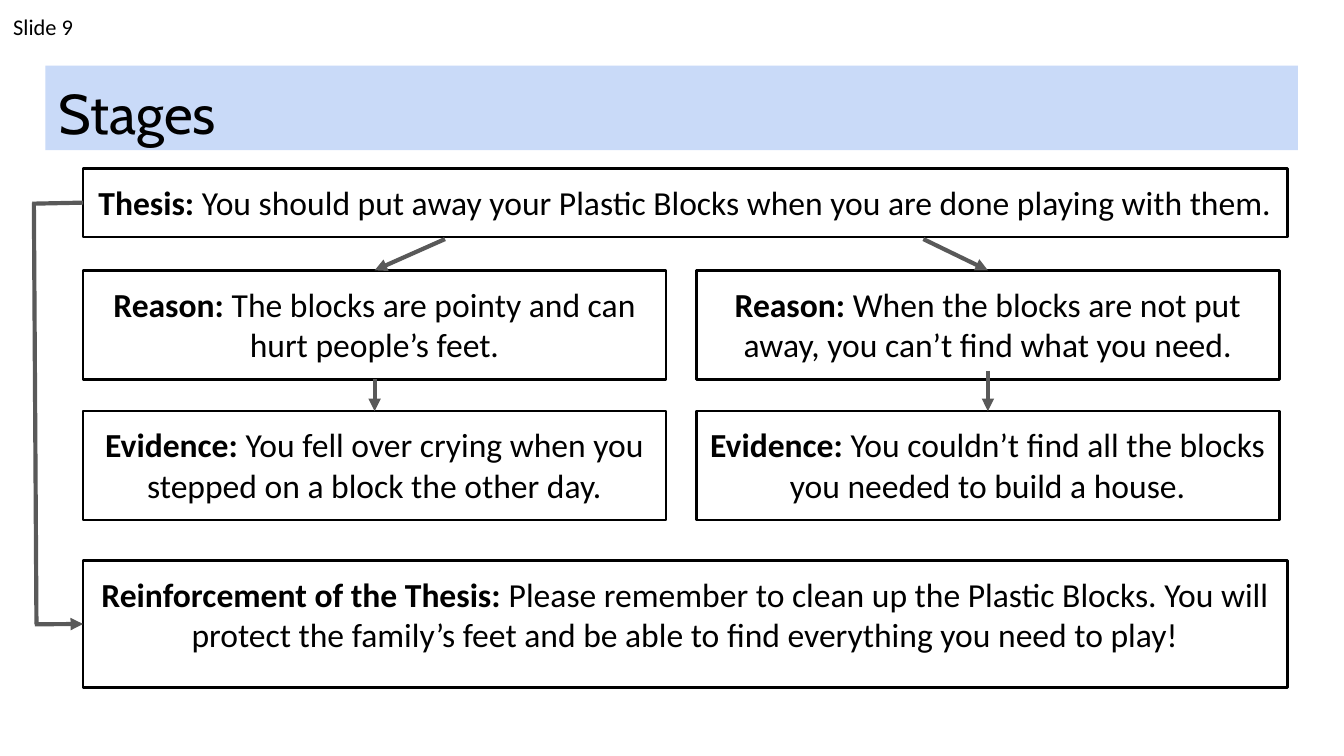
from dataclasses import dataclass
from typing import NamedTuple, Optional

from lxml.etree import SubElement
from pptx import Presentation
from pptx.dml.color import RGBColor
from pptx.enum.shapes import MSO_CONNECTOR as Link, MSO_SHAPE as Kind
from pptx.enum.text import MSO_ANCHOR as Anchor, PP_ALIGN as Align
from pptx.oxml.ns import qn
from pptx.shapes.autoshape import Shape
from pptx.slide import Slide
from pptx.text.text import TextFrame
from pptx.util import Cm, Pt


@dataclass(frozen=True)
class Theme:
    ink: RGBColor = RGBColor(0, 0, 0)
    band: RGBColor = RGBColor(0xC9, 0xDA, 0xF8)
    arrow: RGBColor = RGBColor(0x59, 0x59, 0x59)
    head: str = "Cabin"
    body: str = "Calibri"
    title: float = 30
    text: float = 18
    note: float = 12
    edge: float = 1.5
    stroke: float = 2.25
    inset: float = 0.25


class Area(NamedTuple):
    left: float
    top: float
    width: float
    height: float


class Box(NamedTuple):
    label: str
    text: str
    area: Area


class Point(NamedTuple):
    x: float
    y: float


class Joint(NamedTuple):
    """The middle of one side of a box."""
    box: Shape
    side: int


class Arrow(NamedTuple):
    start: Point
    end: Point
    source: Optional[Joint] = None
    target: Optional[Joint] = None
    tip: bool = True


THEME = Theme()
TOP, LEFT, BOTTOM = 0, 1, 2

WIDE, HALF = 22.76, 11.02
COLS = (1.57, 13.16)
ROWS = (5.11, 7.77)
TALL = 2.06

THESIS = Box("Thesis: ",
             "You should put away your Plastic Blocks when you are done playing with them.",
             Area(COLS[0], 3.18, WIDE, 1.3))
CLOSE = Box("Reinforcement of the Thesis: ",
            "Please remember to clean up the Plastic Blocks. You will protect the "
            "family’s feet and be able to find everything you need to play!",
            Area(COLS[0], 10.59, WIDE, 2.41))
POINTS = (
    ("Reason: ", ("The blocks are pointy and can hurt people’s feet.",
                  "When the blocks are not put away, you can’t find what you need.")),
    ("Evidence: ", ("You fell over crying when you stepped on a block the other day.",
                    "You couldn’t find all the blocks you needed to build a house.")),
)


def set_frame(frame: TextFrame, align: Align) -> None:
    frame.word_wrap = True
    frame.vertical_anchor = Anchor.TOP
    frame.margin_left = frame.margin_right = Cm(THEME.inset)
    frame.margin_top = frame.margin_bottom = Cm(THEME.inset)
    frame.paragraphs[0].alignment = align


def add_run(frame: TextFrame, text: str, face: str, size: float, bold: bool = False) -> None:
    run = frame.paragraphs[0].add_run()
    run.text = text
    font = run.font
    font.name, font.size, font.bold = face, Pt(size), bold
    font.color.rgb = THEME.ink


def add_rect(slide: Slide, area: Area, align: Align) -> Shape:
    rect = slide.shapes.add_shape(Kind.RECTANGLE, *map(Cm, area))
    rect.shadow.inherit = False
    set_frame(rect.text_frame, align)
    return rect


def add_title(slide: Slide, text: str, area: Area) -> None:
    rect = add_rect(slide, area, Align.LEFT)
    rect.fill.solid()
    rect.fill.fore_color.rgb = THEME.band
    rect.line.fill.background()
    add_run(rect.text_frame, text, THEME.head, THEME.title)


def add_box(slide: Slide, box: Box) -> Shape:
    rect = add_rect(slide, box.area, Align.CENTER)
    rect.fill.background()
    rect.line.color.rgb = THEME.ink
    rect.line.width = Pt(THEME.edge)
    add_run(rect.text_frame, box.label, THEME.body, THEME.text, True)
    add_run(rect.text_frame, box.text, THEME.body, THEME.text)
    return rect


def add_arrow(slide: Slide, arrow: Arrow) -> None:
    line = slide.shapes.add_connector(Link.STRAIGHT, *map(Cm, arrow.start + arrow.end))
    if arrow.source:
        line.begin_connect(*arrow.source)
    if arrow.target:
        line.end_connect(*arrow.target)
    line.line.color.rgb = THEME.arrow
    line.line.width = Pt(THEME.stroke)
    if arrow.tip:
        SubElement(line.line._get_or_add_ln(), qn("a:tailEnd"), type="triangle")
    SubElement(line._element.spPr, qn("a:effectLst"))


def add_note(slide: Slide, text: str, area: Area) -> None:
    note = slide.shapes.add_textbox(*map(Cm, area))
    set_frame(note.text_frame, Align.LEFT)
    add_run(note.text_frame, text, THEME.body, THEME.note)


def main() -> None:
    deck = Presentation()
    deck.slide_width, deck.slide_height = Cm(25.4), Cm(14.29)
    slide = deck.slides.add_slide(deck.slide_layouts[6])

    add_title(slide, "Stages", Area(0.86, 1.24, 23.67, 1.6))
    thesis = add_box(slide, THESIS)
    reasons, proofs = [
        [add_box(slide, Box(label, text, Area(left, top, HALF, TALL)))
         for left, text in zip(COLS, texts)]
        for top, (label, texts) in zip(ROWS, POINTS)
    ]
    close = add_box(slide, CLOSE)

    mids = [left + HALF / 2 for left in COLS]
    foot = ROWS[0] + TALL
    for x, mid, reason in zip((8.41, 17.45), mids, reasons):
        add_arrow(slide, Arrow(Point(x, 4.52), Point(mid, ROWS[0]),
                               target=Joint(reason, TOP)))
    # The right-hand arrow starts a little inside its box.
    starts = ((foot, Joint(reasons[0], BOTTOM)), (foot - 0.16, None))
    for mid, (y, source), proof in zip(mids, starts, proofs):
        add_arrow(slide, Arrow(Point(mid, y), Point(mid, ROWS[1]),
                               source, Joint(proof, TOP)))

    high, low = 3.83, 11.8
    for arrow in (
        Arrow(Point(COLS[0], high), Point(0.61, high + 0.02), Joint(thesis, LEFT), tip=False),
        Arrow(Point(0.64, high), Point(0.69, low), tip=False),
        Arrow(Point(0.66, low), Point(COLS[0], low), target=Joint(close, LEFT)),
    ):
        add_arrow(slide, arrow)

    add_note(slide, "Slide 9", Area(0, 0, 1.93, 1.12))
    deck.save("out.pptx")


if __name__ == "__main__":
    main()
